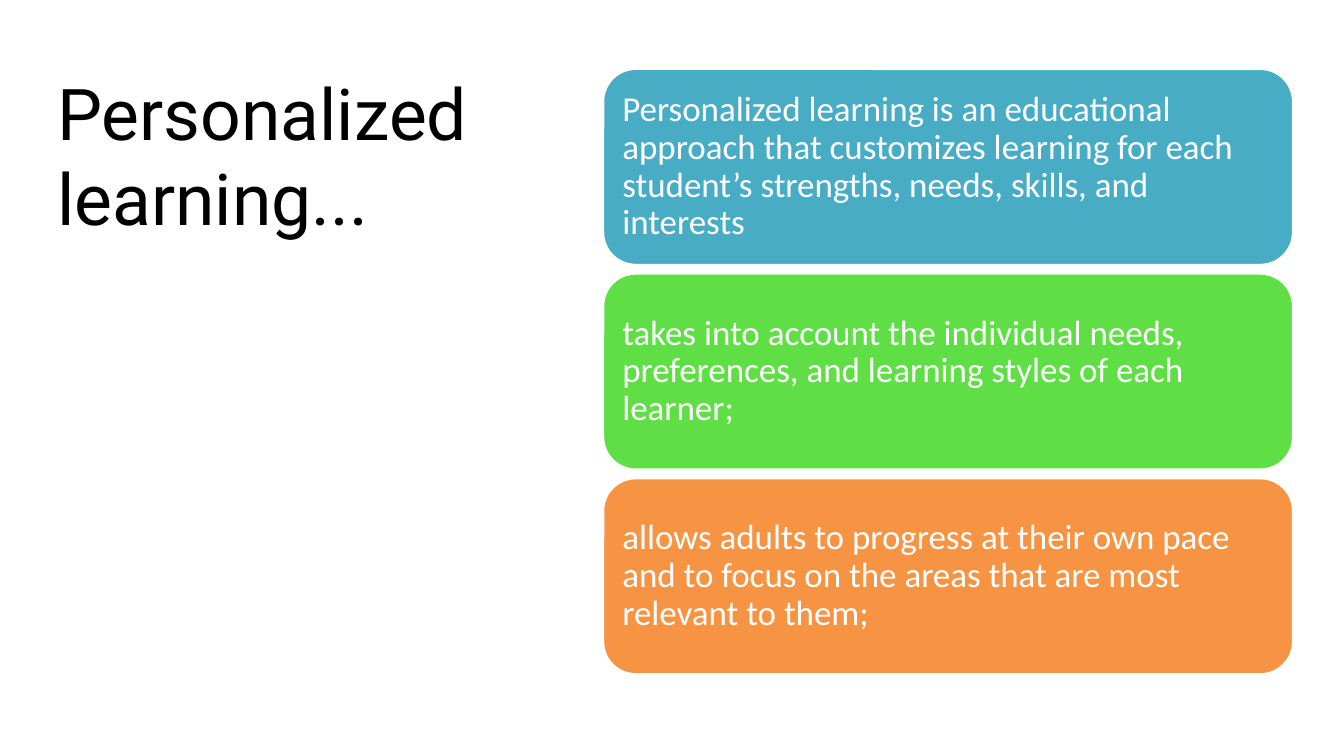
from pptx import Presentation
from pptx.dml.color import RGBColor
from pptx.enum.shapes import MSO_SHAPE
from pptx.enum.text import MSO_ANCHOR, MSO_AUTO_SIZE, PP_ALIGN
from pptx.util import Pt

TITLE = "Personalized learning..."
CARDS = [
    ("Personalized learning is an educational approach that customizes learning "
     "for each student’s strengths, needs, skills, and interests", "49ACC5"),
    ("takes into account the individual needs, preferences, and learning styles "
     "of each learner;", "5FDF45"),
    ("allows adults to progress at their own pace and to focus on the areas "
     "that are most relevant to them;", "F69444"),
]
TOP = 49
CARD_LEFT, CARD_WIDTH, CARD_HEIGHT, CARD_GAP = 430.6, 493.2, 140.4, 5.8


def color(value):
    return RGBColor.from_string(value)


def write(shape, text, font, size, ink, anchor, inset):
    frame = shape.text_frame
    frame.word_wrap = True
    frame.auto_size = MSO_AUTO_SIZE.NONE
    frame.vertical_anchor = anchor
    frame.margin_left = frame.margin_right = Pt(inset)
    frame.margin_top = frame.margin_bottom = Pt(inset)
    frame.text = text
    para = frame.paragraphs[0]
    para.alignment = PP_ALIGN.LEFT
    para.font.name = font
    para.font.size = Pt(size)
    para.font.color.rgb = color(ink)
    return para


def add_card(page, index, text, fill):
    top = TOP + index * (CARD_HEIGHT + CARD_GAP)
    card = page.shapes.add_shape(MSO_SHAPE.ROUNDED_RECTANGLE, Pt(CARD_LEFT), Pt(top),
                                 Pt(CARD_WIDTH), Pt(CARD_HEIGHT))
    card.shadow.inherit = False
    card.fill.solid()
    card.fill.fore_color.rgb = color(fill)
    card.line.color.rgb = color("FFFFFF")
    card.line.width = Pt(2)
    para = write(card, text, "Calibri", 25, "FFFFFF", MSO_ANCHOR.MIDDLE, 7.2)
    para.line_spacing = 0.9


def main():
    deck = Presentation()
    deck.slide_width, deck.slide_height = Pt(960), Pt(540)
    page = deck.slides.add_slide(deck.slide_layouts[5])
    title = page.shapes.title
    title.left, title.top, title.width, title.height = Pt(41), Pt(TOP), Pt(299.5), Pt(433.4)
    write(title, TITLE, "Roboto", 51, "000000", MSO_ANCHOR.TOP, 0)
    for index, (text, fill) in enumerate(CARDS):
        add_card(page, index, text, fill)
    deck.save("out.pptx")


if __name__ == "__main__":
    main()
